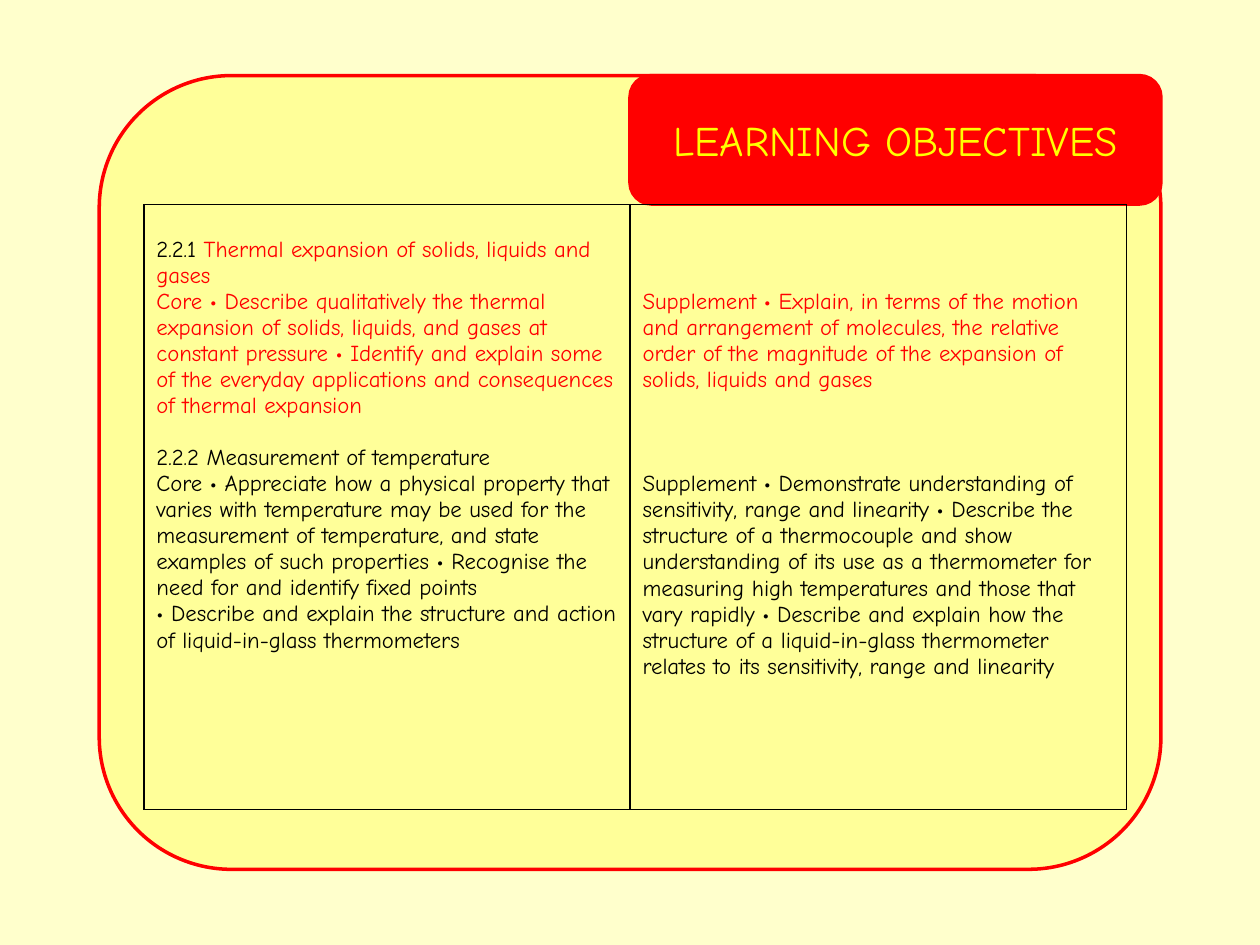
import pptx
import pptx.dml.color
import pptx.enum.shapes
import pptx.enum.text
import pptx.oxml.ns
import pptx.util
from lxml import etree

Pt = pptx.util.Pt
RGBColor = pptx.dml.color.RGBColor
Shapes = pptx.enum.shapes.MSO_SHAPE

CREAM = RGBColor(0xFF, 0xFF, 0xCC)
PALE_YELLOW = RGBColor(0xFF, 0xFF, 0x99)
YELLOW = RGBColor(0xFF, 0xFF, 0x00)
RED = RGBColor(0xFF, 0x00, 0x00)
BLACK = RGBColor(0x00, 0x00, 0x00)

FONT = "Comic Neue"
BODY_SIZE = 13
LINE = 14.9  # height of one line of body text
TAB = (360, 43.2, 303.4, 73.4)

# Each column: blank lines above the text, then its paragraphs as
# (blank lines before, runs of text and colour)
CORE = (1, [
    (0, [("2.2.1 ", BLACK),
         ("Thermal expansion of solids, liquids and gases", RED)]),
    (0, [("Core • Describe qualitatively the thermal expansion of solids, "
          "liquids, and gases at constant pressure • Identify and explain "
          "some of the everyday applications and consequences of thermal "
          "expansion", RED)]),
    (1, [("2.2.2 Measurement of temperature", BLACK)]),
    (0, [("Core • Appreciate how a physical property that varies with "
          "temperature may be used for the measurement of temperature, and "
          "state examples of such properties • Recognise the need for and "
          "identify fixed points", BLACK)]),
    (0, [("• Describe and explain the structure and action of "
          "liquid-in-glass thermometers", BLACK)]),
])
SUPPLEMENT = (3, [
    (0, [("Supplement • Explain, in terms of the motion and arrangement of "
          "molecules, the relative order of the magnitude of the expansion "
          "of solids, liquids and gases", RED)]),
    (3, [("Supplement • Demonstrate understanding of sensitivity, range and "
          "linearity • Describe the structure of a thermocouple and show "
          "understanding of its use as a thermometer for measuring high "
          "temperatures and those that vary rapidly • Describe and explain "
          "how the structure of a liquid-in-glass thermometer relates to its "
          "sensitivity, range and linearity", BLACK)]),
])


class SlideBuilder:
    def __init__(self, slide, font):
        self.slide = slide
        self.font = font

    def background(self, color):
        fill = self.slide.background.fill
        fill.solid()
        fill.fore_color.rgb = color

    def panel(self, kind, box, color, line_color=None):
        shape = self.slide.shapes.add_shape(kind, *map(Pt, box))
        shape.shadow.inherit = False
        shape.fill.solid()
        shape.fill.fore_color.rgb = color
        if line_color is None:
            shape.line.fill.background()
        else:
            shape.line.color.rgb = line_color
            shape.line.width = Pt(2)

    def run(self, paragraph, text, size, color):
        run = paragraph.add_run()
        run.text = text
        run.font.name = self.font
        run.font.size = Pt(size)
        run.font.color.rgb = color

    def title(self, text, box, size, color):
        title = self.slide.shapes.title
        title.left, title.top, title.width, title.height = map(Pt, box)
        frame = title.text_frame
        frame.word_wrap = True
        frame.vertical_anchor = pptx.enum.text.MSO_ANCHOR.MIDDLE
        paragraph = frame.paragraphs[0]
        paragraph.alignment = pptx.enum.text.PP_ALIGN.CENTER
        self.run(paragraph, text, size, color)
        # Bring the title in front of the panels
        title.element.getparent().append(title.element)

    def table(self, box, widths, columns):
        frame = self.slide.shapes.add_table(1, len(columns), *map(Pt, box))
        table = frame.table
        table.first_row = table.horz_banding = False
        for index, (width, column) in enumerate(zip(widths, columns)):
            table.columns[index].width = Pt(width)
            self.cell(table.cell(0, index), *column)

    def cell(self, cell, lines_above, paragraphs):
        self.borders(cell, BLACK)
        cell.fill.background()
        cell.margin_top = Pt(3.6 + lines_above * LINE)
        frame = cell.text_frame
        for index, (lines_before, runs) in enumerate(paragraphs):
            paragraph = frame.add_paragraph() if index else frame.paragraphs[0]
            paragraph.space_before = Pt(lines_before * LINE)
            for text, color in runs:
                self.run(paragraph, text, BODY_SIZE, color)

    def borders(self, cell, color):
        qn = pptx.oxml.ns.qn
        properties = cell._tc.get_or_add_tcPr()
        for side in "LRTB":
            line = etree.SubElement(properties, qn("a:ln" + side), w=str(Pt(1)))
            fill = etree.SubElement(line, qn("a:solidFill"))
            etree.SubElement(fill, qn("a:srgbClr"), val=str(color))


def main():
    presentation = pptx.Presentation()
    presentation.slide_width, presentation.slide_height = Pt(720), Pt(540)
    title_only = presentation.slide_layouts[5]
    builder = SlideBuilder(presentation.slides.add_slide(title_only), FONT)

    # Backdrop and frame
    builder.background(PALE_YELLOW)
    builder.panel(Shapes.RECTANGLE, (0, 0, 720, 540), CREAM)
    builder.panel(Shapes.ROUNDED_RECTANGLE, (56.7, 43.2, 606.7, 453.6),
                  PALE_YELLOW, RED)

    # Title tab
    builder.panel(Shapes.ROUNDED_RECTANGLE, TAB, RED, RED)
    builder.title("LEARNING OBJECTIVES", TAB, 24, YELLOW)

    # Objectives
    builder.table((82.2, 116.9, 561.4, 345.8), (277.8, 283.6),
                  (CORE, SUPPLEMENT))

    presentation.save("out.pptx")


if __name__ == "__main__":
    main()
